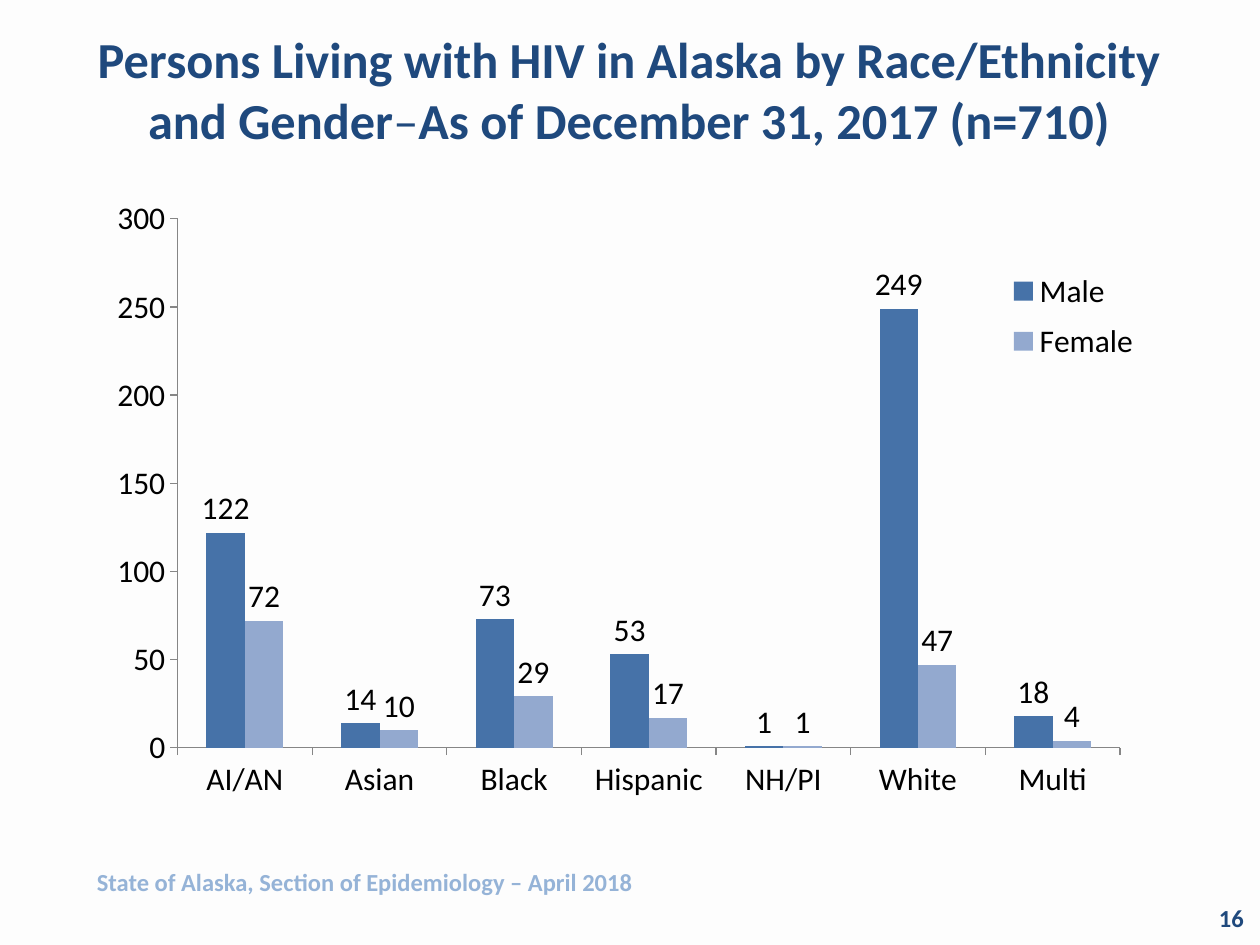
from dataclasses import dataclass

import lxml.etree
import pptx
import pptx.chart.data
import pptx.dml.color
import pptx.enum.chart
import pptx.enum.text
import pptx.oxml
import pptx.oxml.ns
import pptx.util

Inches = pptx.util.Inches
Pt = pptx.util.Pt
RGB = pptx.dml.color.RGBColor.from_string
Align = pptx.enum.text.PP_ALIGN
Anchor = pptx.enum.text.MSO_ANCHOR
qn = pptx.oxml.ns.qn


@dataclass(frozen=True)
class Theme:
    face: str = "Calibri"
    back: str = "FDFDFD"
    navy: str = "1F497D"
    pale: str = "95B3D7"
    ink: str = "000000"
    axis: str = "868686"
    head: float = 28.8
    body: float = 18
    note: float = 14


@dataclass(frozen=True)
class Box:
    left: float
    top: float
    width: float
    height: float

    def spans(self) -> tuple:
        return tuple(map(Inches, (self.left, self.top, self.width, self.height)))


@dataclass(frozen=True)
class Label:
    text: str
    box: Box
    color: str
    align: Align
    anchor: Anchor


@dataclass(frozen=True)
class Group:
    name: str
    color: str
    counts: tuple


THEME = Theme()
TITLE = (
    ("Persons Living with HIV in Alaska by Race/Ethnicity and Gender", True),
    ("–", False),
    ("As of December 31, 2017 (n=710)", True),
)
LABELS = (
    Label("16", Box(7.64, 7.08, 2.33, 0.4), THEME.navy, Align.RIGHT, Anchor.MIDDLE),
    Label("State of Alaska, Section of Epidemiology – April 2018",
          Box(0.67, 6.83, 7, 0.34), THEME.pale, Align.LEFT, Anchor.TOP),
)
RACES = ("AI/AN", "Asian", "Black", "Hispanic", "NH/PI", "White", "Multi")
GROUPS = (
    Group("Male", "4672A8", (122, 14, 73, 53, 1, 249, 18)),
    Group("Female", "93A9CF", (72, 10, 29, 17, 1, 47, 4)),
)


def apply(target, values: dict) -> None:
    for name, value in values.items():
        setattr(target, name, value)


def style(font, size: float, color: str, bold: bool = False) -> None:
    apply(font, {"name": THEME.face, "size": Pt(size), "bold": bold})
    font.color.rgb = RGB(color)


def draw_title(shape) -> None:
    box = Box(0.33, 0.08, 9.33, 1.25)
    apply(shape, dict(zip(("left", "top", "width", "height"), box.spans())))
    frame = shape.text_frame
    apply(frame, {"word_wrap": True, "vertical_anchor": Anchor.MIDDLE,
                  "auto_size": pptx.enum.text.MSO_AUTO_SIZE.NONE})
    para = frame.paragraphs[0]
    para.alignment = Align.CENTER
    for text, bold in TITLE:
        run = para.add_run()
        run.text = text
        style(run.font, THEME.head, THEME.navy, bold)


def draw_label(slide, label: Label) -> None:
    frame = slide.shapes.add_textbox(*label.box.spans()).text_frame
    apply(frame, {"word_wrap": True, "vertical_anchor": label.anchor})
    para = frame.paragraphs[0]
    para.alignment = label.align
    run = para.add_run()
    run.text = label.text
    style(run.font, THEME.note, label.color, True)


def make_layout(box: Box, inner: bool = False):
    """Build a manual layout in fractions of the chart area."""
    layout = lxml.etree.Element(qn("c:layout"))
    manual = lxml.etree.SubElement(layout, qn("c:manualLayout"))
    parts = [("layoutTarget", "inner")] if inner else []
    parts += [("xMode", "edge"), ("yMode", "edge"), ("x", box.left),
              ("y", box.top), ("w", box.width), ("h", box.height)]
    for tag, value in parts:
        lxml.etree.SubElement(manual, qn(f"c:{tag}")).set("val", str(value))
    return layout


def place_parts(chart) -> None:
    area = chart.element.find(".//" + qn("c:plotArea"))
    legend = chart.element.find(".//" + qn("c:legend"))
    for parent in (area, legend):
        for old in parent.findall(qn("c:layout")):
            parent.remove(old)
    area.insert(0, make_layout(Box(0.11, 0.064, 0.831, 0.848), True))
    legend.find(qn("c:legendPos")).addnext(
        make_layout(Box(0.82, 0.13, 0.16, 0.18)))


def draw_chart(slide) -> None:
    data = pptx.chart.data.CategoryChartData()
    data.categories = RACES
    for group in GROUPS:
        data.add_series(group.name, group.counts)
    kind = pptx.enum.chart.XL_CHART_TYPE.COLUMN_CLUSTERED
    box = Box(0.42, 1.42, 9, 4.95)
    chart = slide.shapes.add_chart(kind, *box.spans(), data).chart
    apply(chart, {"has_title": False, "has_legend": True})
    style(chart.font, THEME.body, THEME.ink)
    apply(chart.legend, {"include_in_layout": False,
                         "position": pptx.enum.chart.XL_LEGEND_POSITION.RIGHT})

    # Axes
    for axis in (chart.category_axis, chart.value_axis):
        apply(axis, {"has_major_gridlines": False,
                     "major_tick_mark": pptx.enum.chart.XL_TICK_MARK.OUTSIDE})
        axis.format.line.color.rgb = RGB(THEME.axis)
        axis.format.line.width = Pt(0.75)
    apply(chart.value_axis, {"minimum_scale": 0, "maximum_scale": 300,
                             "major_unit": 50})

    # Bars and their values
    plot = chart.plots[0]
    apply(plot, {"gap_width": 150, "overlap": 0, "vary_by_categories": False})
    for series, group in zip(plot.series, GROUPS):
        series.format.fill.solid()
        series.format.fill.fore_color.rgb = RGB(group.color)
        apply(series.data_labels, {
            "show_value": True,
            "position": pptx.enum.chart.XL_LABEL_POSITION.OUTSIDE_END})
    place_parts(chart)


def main() -> None:
    deck = pptx.Presentation()
    apply(deck, {"slide_width": Inches(10), "slide_height": Inches(7.5)})
    slide = deck.slides.add_slide(deck.slide_layouts[5])
    slide.background.fill.solid()
    slide.background.fill.fore_color.rgb = RGB(THEME.back)
    draw_title(slide.shapes.title)
    for label in LABELS:
        draw_label(slide, label)
    draw_chart(slide)
    deck.save("out.pptx")


if __name__ == "__main__":
    main()
